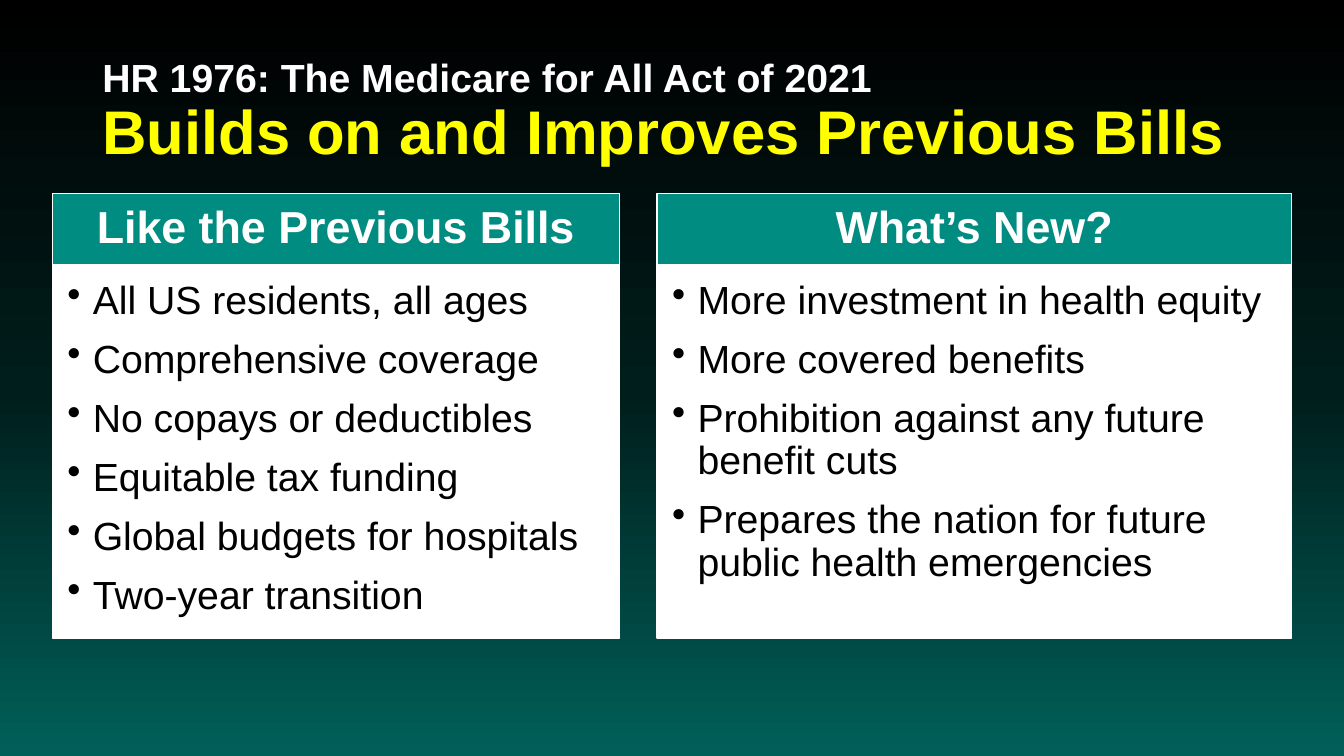
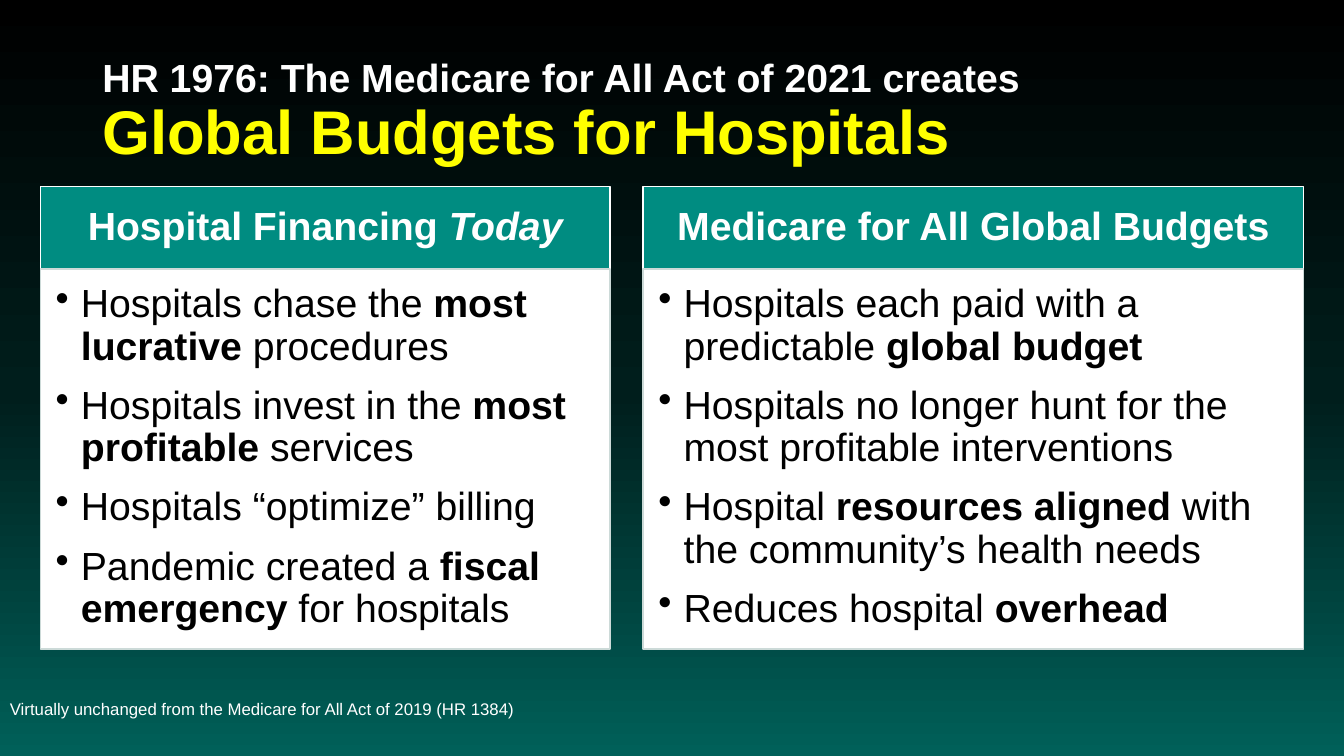
import copy

import pptx
import pptx.dml.color
import pptx.enum.shapes
import pptx.enum.text
import pptx.oxml
import pptx.oxml.ns
import pptx.util
from lxml import etree

Cm = pptx.util.Cm
Pt = pptx.util.Pt
RGBColor = pptx.dml.color.RGBColor
ALIGN = pptx.enum.text.PP_ALIGN
ANCHOR = pptx.enum.text.MSO_ANCHOR
RECTANGLE = pptx.enum.shapes.MSO_SHAPE.RECTANGLE
qn = pptx.oxml.ns.qn

BLACK = RGBColor(0x00, 0x00, 0x00)
WHITE = RGBColor(0xFF, 0xFF, 0xFF)
YELLOW = RGBColor(0xFF, 0xFF, 0x00)
TEAL = RGBColor(0x00, 0x8C, 0x81)
MIST = RGBColor(0xCC, 0xDA, 0xD8)
DEEP_GREEN = RGBColor(0x00, 0x1E, 0x1C)
SEA_GREEN = RGBColor(0x00, 0x60, 0x59)
BACKGROUND_STOPS = [(0, BLACK), (0.52, DEEP_GREEN), (1, SEA_GREEN)]

PAGE_WIDTH, PAGE_HEIGHT = 33.87, 19.05
BULLET_INDENT = Cm(0.64)


def add_text(para, text, size=28, color=WHITE, bold=False, emphasis="bold"):
    """Add text to a paragraph; parts between asterisks get the emphasis."""
    para.line_spacing = 0.9
    for index, part in enumerate(text.split("*")):
        if not part:
            continue
        span = para.add_run()
        span.text = part
        span.font.name = "Arial"
        span.font.size = Pt(size)
        span.font.color.rgb = color
        span.font.bold = bold
        if index % 2:
            setattr(span.font, emphasis, True)


class Deck:
    def __init__(self):
        self.deck = pptx.Presentation()
        self.deck.slide_width = Cm(PAGE_WIDTH)
        self.deck.slide_height = Cm(PAGE_HEIGHT)
        self.page = None

    def add_page(self):
        self.page = self.deck.slides.add_slide(self.deck.slide_layouts[6])
        fill = self.page.background.fill
        fill.gradient()
        fill.gradient_angle = 270
        stop_list = self.page.element.find(".//" + qn("a:gsLst"))
        stop_list.append(copy.deepcopy(stop_list[0]))
        for stop, (position, color) in zip(fill.gradient_stops, BACKGROUND_STOPS):
            stop.position = position
            stop.color.rgb = color

    def text_box(self, left, top, width, height):
        box = self.page.shapes.add_textbox(Cm(left), Cm(top), Cm(width), Cm(height))
        box.text_frame.word_wrap = True
        box.text_frame.vertical_anchor = ANCHOR.MIDDLE
        return box.text_frame.paragraphs[0]

    def title(self, lead, headline):
        para = self.text_box(2.33, 1.02, 29.21, 3.68)
        add_text(para, lead, bold=True)
        para.add_line_break()
        add_text(para, headline, size=44, color=YELLOW, bold=True)

    def footnote(self, text):
        add_text(self.text_box(0, 16.71, 22.86, 2.34), text, size=12)

    def panel(self, left, top, width, height, fill, line, insets, anchor):
        """Draw an outlined rectangle and return its text frame."""
        box = self.page.shapes.add_shape(
            RECTANGLE, Cm(left), Cm(top), Cm(width), Cm(height))
        box.shadow.inherit = False
        box.fill.solid()
        box.fill.fore_color.rgb = fill
        box.line.color.rgb = line
        box.line.width = Pt(1)
        frame = box.text_frame
        frame.word_wrap = True
        frame.vertical_anchor = anchor
        (frame.margin_left, frame.margin_top,
         frame.margin_right, frame.margin_bottom) = map(Cm, insets)
        return frame

    def bullets(self, frame, items):
        for index, item in enumerate(items):
            para = frame.add_paragraph() if index else frame.paragraphs[0]
            properties = para._p.get_or_add_pPr()
            properties.set("marL", str(BULLET_INDENT))
            properties.set("indent", str(-BULLET_INDENT))
            etree.SubElement(properties, qn("a:buChar")).set("char", "•")
            para.alignment = ALIGN.LEFT
            para.space_after = Pt(12)
            add_text(para, item, color=BLACK)

    def columns(self, cards, margin, gap, first_width, top, head_height,
                body_height, head_size, body_line):
        """Place two headed lists; the second fills the remaining width."""
        second_left = margin + first_width + gap
        places = [(margin, first_width),
                  (second_left, PAGE_WIDTH - margin - second_left)]
        for (left, width), (heading, items) in zip(places, cards):
            head = self.panel(left, top, width, head_height, TEAL, WHITE,
                              (0.51, 0.3, 0.51, 0.3), ANCHOR.MIDDLE)
            head.paragraphs[0].alignment = ALIGN.CENTER
            add_text(head.paragraphs[0], heading, size=head_size, bold=True,
                     emphasis="italic")
            body = self.panel(left, top + head_height, width, body_height,
                              WHITE, body_line, (0.38, 0.38, 0.51, 0.58),
                              ANCHOR.TOP)
            self.bullets(body, items)


def main():
    deck = Deck()

    # What the bill keeps and what it adds
    deck.add_page()
    deck.title("HR 1976: The Medicare for All Act of 2021",
               "Builds on and Improves Previous Bills")
    deck.columns([
        ("Like the Previous Bills", [
            "All US residents, all ages",
            "Comprehensive coverage",
            "No copays or deductibles",
            "Equitable tax funding",
            "Global budgets for hospitals",
            "Two-year transition",
        ]),
        ("What’s New?", [
            "More investment in health equity",
            "More covered benefits",
            "Prohibition against any future benefit cuts",
            "Prepares the nation for future public health emergencies",
        ]),
    ], margin=1.32, gap=0.94, first_width=14.3, top=4.88, head_height=1.8,
        body_height=9.4, head_size=32, body_line=WHITE)

    # Hospital financing compared
    deck.add_page()
    deck.title("HR 1976: The Medicare for All Act of 2021 creates",
               "Global Budgets for Hospitals")
    deck.footnote("Virtually unchanged from the Medicare for All Act of 2019 (HR 1384)")
    deck.columns([
        ("Hospital Financing *Today*", [
            "Hospitals chase the *most lucrative* procedures",
            "Hospitals invest in the *most profitable* services",
            "Hospitals “optimize” billing",
            "Pandemic created a *fiscal emergency* for hospitals",
        ]),
        ("Medicare for All Global Budgets", [
            "Hospitals each paid with a predictable *global budget*",
            "Hospitals no longer hunt for the most profitable interventions",
            "Hospital *resources aligned* with the community’s health needs",
            "Reduces hospital *overhead*",
        ]),
    ], margin=1.02, gap=0.84, first_width=14.35, top=4.7, head_height=2.08,
        body_height=9.58, head_size=28, body_line=MIST)

    deck.deck.save("out.pptx")


if __name__ == "__main__":
    main()
